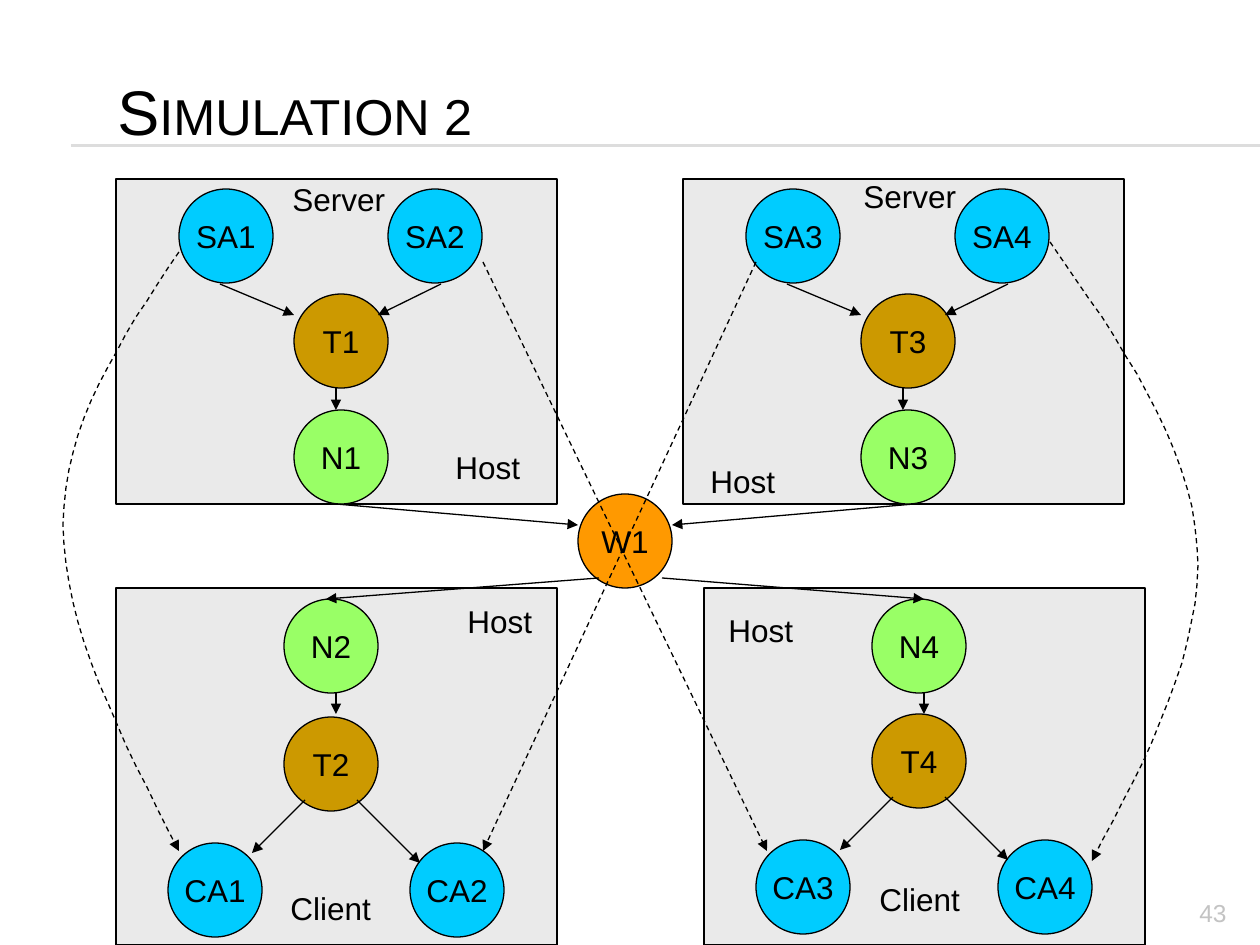
from lxml import etree
from pptx import Presentation, util as u
from pptx.dml.color import RGBColor
from pptx.enum import dml, shapes, text
from pptx.oxml.ns import qn

EMU_PER_PX = 914400 / 126
NODE = 94
BLACK, RULE, PALE = "000000", "DDDDDD", "C3C3C3"
HOST, AGENT, TRANSPORT, NETWORK, WAN = "EAEAEA", "00CCFF", "CC9900", "99FF66", "FF9900"


def px(length):
    return u.Emu(round(length * EMU_PER_PX))


def color(value):
    return RGBColor.from_string(value)


def style_line(line, stroke=BLACK, dashed=False, arrow=False):
    line.color.rgb = color(stroke)
    line.width = u.Pt(0.75)
    if dashed:
        line.dash_style = dml.MSO_LINE.DASH
    if arrow:
        etree.SubElement(line._get_or_add_ln(), qn("a:tailEnd"), type="triangle")


def write(frame, words, size=18, ink=BLACK, align=text.PP_ALIGN.LEFT):
    paragraph = frame.paragraphs[0]
    paragraph.alignment = align
    run = paragraph.add_run()
    run.text = words
    run.font.name = "Arial"
    run.font.size = u.Pt(size)
    run.font.color.rgb = color(ink)
    return run


def add_label(slide, words, x, y, width, height, wrap=False, **style):
    frame = slide.shapes.add_textbox(px(x), px(y), px(width), px(height)).text_frame
    frame.word_wrap = wrap
    return frame, write(frame, words, **style)


def add_area(slide, kind, x, y, width, height, fill):
    area = slide.shapes.add_shape(kind, px(x), px(y), px(width), px(height))
    area.shadow.inherit = False
    area.fill.solid()
    area.fill.fore_color.rgb = color(fill)
    style_line(area.line)
    return area


def add_host(slide, x, y, height):
    add_area(slide, shapes.MSO_SHAPE.RECTANGLE, x, y, 441, height, HOST)


def add_node(slide, words, x, y, fill):
    frame = add_area(slide, shapes.MSO_SHAPE.OVAL, x, y, NODE, NODE, fill).text_frame
    frame.word_wrap = False
    frame.vertical_anchor = text.MSO_ANCHOR.MIDDLE
    write(frame, words, align=text.PP_ALIGN.CENTER)


def add_link(slide, x1, y1, x2, y2, arrow=True, **style):
    link = slide.shapes.add_connector(
        shapes.MSO_CONNECTOR.STRAIGHT, px(x1), px(y1), px(x2), px(y2))
    style_line(link.line, arrow=arrow, **style)
    etree.SubElement(link._element.spPr, qn("a:effectLst"))


def bezier(points, t):
    weights = (1 - t) ** 3, 3 * t * (1 - t) ** 2, 3 * t * t * (1 - t), t ** 3
    return tuple(sum(w * p[axis] for w, p in zip(weights, points)) for axis in (0, 1))


def add_curve(slide, upper, lower, steps=16):
    vertices = [bezier(half, i / steps) for half in (upper, lower) for i in range(1, steps + 1)]
    builder = slide.shapes.build_freeform(*upper[0], scale=EMU_PER_PX)
    builder.add_line_segments(vertices, close=False)
    curve = builder.convert_to_shape()
    curve.shadow.inherit = False
    curve.fill.background()
    style_line(curve.line, dashed=True, arrow=True)


def add_server(slide, dx, agents, transport, network):
    add_host(slide, 116 + dx, 179, 325)
    for agent, x in zip(agents, (179, 388)):
        add_node(slide, agent, x + dx, 189, AGENT)
    add_node(slide, transport, 294 + dx, 294, TRANSPORT)
    add_node(slide, network, 294 + dx, 410, NETWORK)
    add_link(slide, 220 + dx, 284, 294 + dx, 315)
    add_link(slide, 441 + dx, 284, 378 + dx, 315)
    add_link(slide, 336 + dx, 388, 336 + dx, 410)


def add_client(slide, dx, dy, agents, transport, network):
    add_host(slide, 116 + dx, 588, 357)
    add_node(slide, network, 284 + dx, 599, NETWORK)
    add_node(slide, transport, 284 + dx, 717 + dy, TRANSPORT)
    for agent, x in zip(agents, (168, 410)):
        add_node(slide, agent, x + dx, 843 + dy, AGENT)
    add_link(slide, 336 + dx, 693, 336 + dx, 714)
    add_link(slide, 305 + dx, 800 + dy, 252 + dx, 853 + dy)
    add_link(slide, 357 + dx, 800 + dy, 420 + dx, 863 + dy)


def add_heading(slide):
    for y in (145, 146):
        add_link(slide, 71, y, 1260, y, arrow=False, stroke=RULE)
    add_label(slide, "43", 1134, 892, 105, 34, True, size=14, ink=PALE,
              align=text.PP_ALIGN.RIGHT)
    frame, title = add_label(slide, "Simulation 2", 105, 32, 1071, 157, True, size=36)
    frame.vertical_anchor = text.MSO_ANCHOR.MIDDLE
    title.font._element.set("cap", "small")


def add_routes(slide):
    for route in ((336, 504, 578, 525), (599, 578, 326, 599),
                  (914, 504, 672, 525), (662, 578, 924, 599)):
        add_link(slide, *route)
    for route in ((483, 262, 767, 851), (756, 262, 483, 851)):
        add_link(slide, *route, dashed=True)
    add_curve(slide, ((179, 252), (121, 339), (63, 426), (63, 525)),
              ((63, 525), (63, 625), (121, 737), (179, 851)))
    add_curve(slide, ((1050, 242), (1120, 343), (1190, 442), (1197, 546)),
              ((1197, 546), (1204, 649), (1148, 755), (1092, 861)))


def add_captions(slide):
    captions = {
        "Host": (91, ((716, 605), (698, 456), (443, 442), (455, 596))),
        "Server": (120, ((280, 174), (851, 171))),
        "Client": (107, ((867, 874), (278, 883))),
    }
    for words, (width, places) in captions.items():
        for x, y in places:
            add_label(slide, words, x, y, width, 50)


def main():
    deck = Presentation()
    deck.slide_width, deck.slide_height = px(1260), px(945)
    slide = deck.slides.add_slide(deck.slide_layouts[6])
    add_heading(slide)
    add_server(slide, 0, ("SA1", "SA2"), "T1", "N1")
    add_server(slide, 567, ("SA3", "SA4"), "T3", "N3")
    add_client(slide, 0, 0, ("CA1", "CA2"), "T2", "N2")
    add_client(slide, 588, -3, ("CA3", "CA4"), "T4", "N4")
    add_node(slide, "W1", 578, 494, WAN)
    add_routes(slide)
    add_captions(slide)
    deck.save("out.pptx")


if __name__ == "__main__":
    main()
